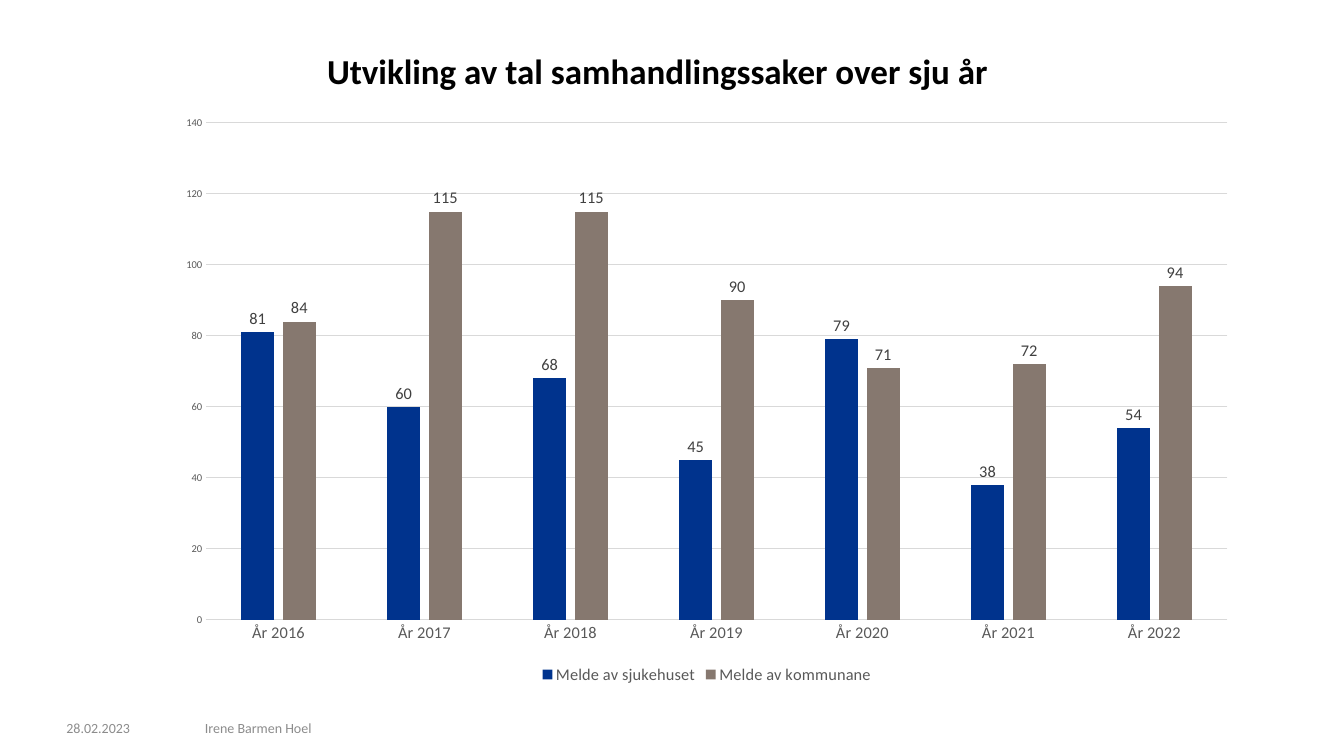
import pptx
import pptx.chart.data
import pptx.dml.color
import pptx.enum.chart
import pptx.enum.text
import pptx.util
from pptx.util import Inches

RGBColor = pptx.dml.color.RGBColor
BLACK = RGBColor(0x00, 0x00, 0x00)
FOOTER_GREY = RGBColor(0x8C, 0x8C, 0x8C)
AXIS_GREY = RGBColor(0x59, 0x59, 0x59)
LABEL_GREY = RGBColor(0x40, 0x40, 0x40)
GRID_GREY = RGBColor(0xD9, 0xD9, 0xD9)
BLUE = RGBColor(0x00, 0x33, 0x8D)
BROWN = RGBColor(0x86, 0x78, 0x6F)


def format_font(font, size, color, bold=False):
    values = {"name": "Calibri", "size": pptx.util.Pt(size), "bold": bold}
    for name, value in values.items():
        setattr(font, name, value)
    font.color.rgb = color


def format_frame(text_frame, anchor):
    values = {"margin_left": 0, "margin_top": 0, "margin_right": 0,
              "margin_bottom": 0, "word_wrap": True, "vertical_anchor": anchor,
              "auto_size": pptx.enum.text.MSO_AUTO_SIZE.NONE}
    for name, value in values.items():
        setattr(text_frame, name, value)


presentation = pptx.Presentation()
presentation.slide_width = Inches(16)
presentation.slide_height = Inches(9)
slide = presentation.slides.add_slide(presentation.slide_layouts[5])

# Title
title = slide.shapes.title
title_place = {"left": 0.79, "top": 0.65, "width": 14.08, "height": 0.65}
for name, value in title_place.items():
    setattr(title, name, Inches(value))
format_frame(title.text_frame, pptx.enum.text.MSO_ANCHOR.TOP)
title.text_frame.text = "Utvikling av tal samhandlingssaker over sju år"
paragraph = title.text_frame.paragraphs[0]
paragraph.alignment = pptx.enum.text.PP_ALIGN.CENTER
paragraph.line_spacing = pptx.util.Pt(32)
format_font(paragraph.font, 30, BLACK, bold=True)

# Date and author
for text, left, width in [("28.02.2023", 0.79, 1.26),
                          ("Irene Barmen Hoel", 2.44, 9.77)]:
    shape = slide.shapes.add_textbox(
        Inches(left), Inches(8.54), Inches(width), Inches(0.24))
    format_frame(shape.text_frame, pptx.enum.text.MSO_ANCHOR.MIDDLE)
    shape.text_frame.text = text
    format_font(shape.text_frame.paragraphs[0].font, 12, FOOTER_GREY)

# Chart data
all_series = [
    ("Melde av sjukehuset", [81, 60, 68, 45, 79, 38, 54], BLUE),
    ("Melde av kommunane", [84, 115, 115, 90, 71, 72, 94], BROWN),
]
chart_data = pptx.chart.data.CategoryChartData()
chart_data.categories = [f"År {year}" for year in range(2016, 2023)]
for name, values, color in all_series:
    chart_data.add_series(name, values)

# Column chart
chart = slide.shapes.add_chart(
    pptx.enum.chart.XL_CHART_TYPE.COLUMN_CLUSTERED,
    Inches(1.96), Inches(1.25), Inches(12.91), Inches(6.94), chart_data).chart
format_font(chart.font, 10, BLACK)
chart.has_title = False
chart.has_legend = True
chart.legend.position = pptx.enum.chart.XL_LEGEND_POSITION.BOTTOM
chart.legend.include_in_layout = False
format_font(chart.legend.font, 14, AXIS_GREY)

# Columns and value labels
plot = chart.plots[0]
plot.gap_width = 219
plot.overlap = -27
plot.vary_by_categories = False
for series, (name, values, color) in zip(plot.series, all_series):
    series.format.fill.solid()
    series.format.fill.fore_color.rgb = color
    labels = series.data_labels
    labels.show_value = True
    labels.position = pptx.enum.chart.XL_LABEL_POSITION.OUTSIDE_END
    format_font(labels.font, 14, LABEL_GREY)

# Axes and gridlines
for axis, size in [(chart.category_axis, 14), (chart.value_axis, 9)]:
    axis.major_tick_mark = pptx.enum.chart.XL_TICK_MARK.NONE
    axis.minor_tick_mark = pptx.enum.chart.XL_TICK_MARK.NONE
    format_font(axis.tick_labels.font, size, AXIS_GREY)
value_axis = chart.value_axis
value_axis.minimum_scale = 0
value_axis.maximum_scale = 140
value_axis.major_unit = 20
value_axis.has_major_gridlines = True
value_axis.format.line.fill.background()
for line in [chart.category_axis.format.line,
             value_axis.major_gridlines.format.line]:
    line.color.rgb = GRID_GREY
    line.width = pptx.util.Pt(0.75)

presentation.save("out.pptx")
